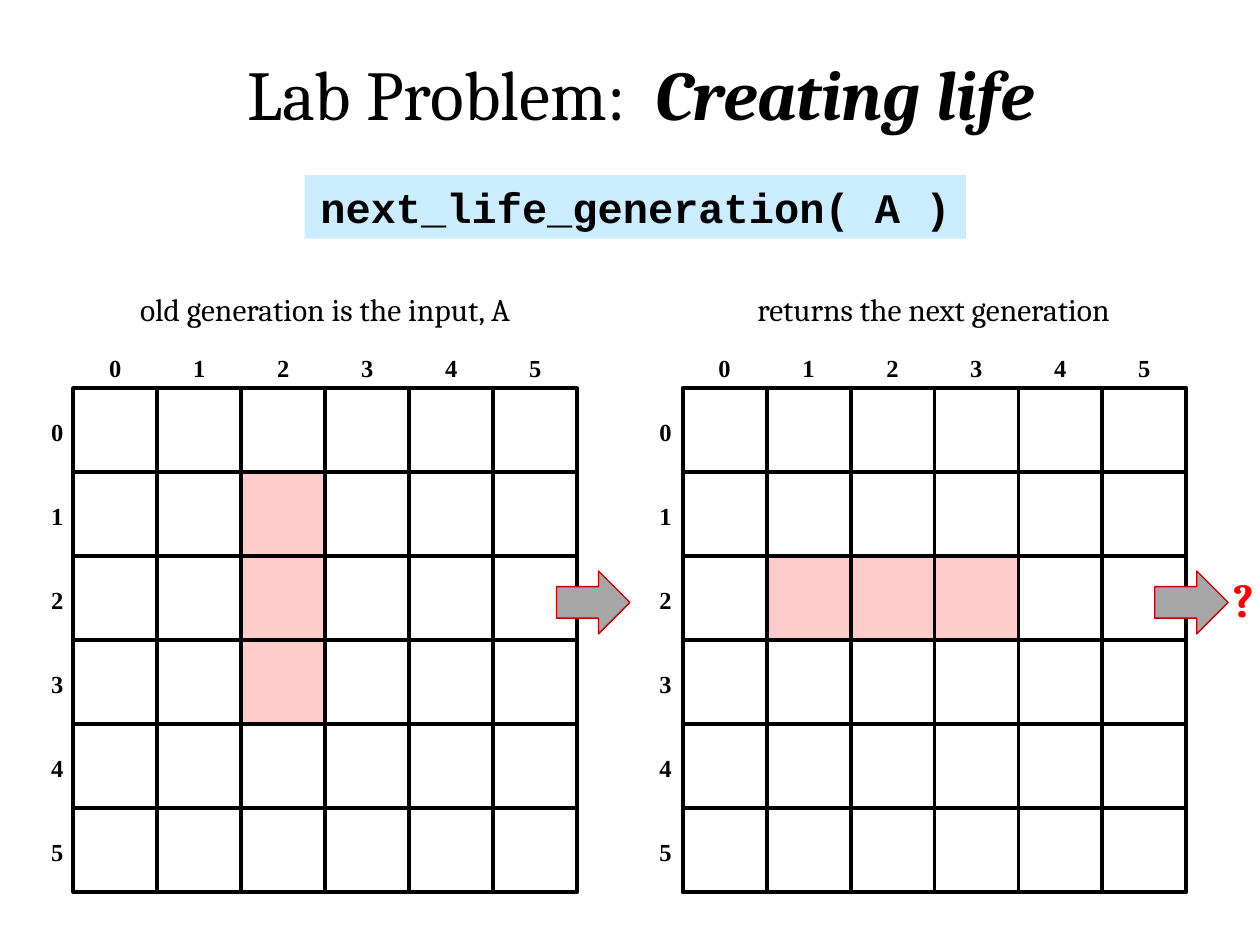
from pptx import Presentation
from pptx.dml.color import RGBColor
from pptx.enum.shapes import MSO_SHAPE as Shape
from pptx.enum.text import MSO_ANCHOR as Anchor, MSO_AUTO_SIZE as AutoSize, PP_ALIGN as Align
from pptx.util import Cm, Pt

BLACK = RGBColor(0x00, 0x00, 0x00)
WHITE = RGBColor(0xFF, 0xFF, 0xFF)
PINK = RGBColor(0xFF, 0xCC, 0xCC)
LIGHT_BLUE = RGBColor(0xCC, 0xEC, 0xFF)
GRAY = RGBColor(0xA6, 0xA6, 0xA6)
DARK_RED = RGBColor(0xC0, 0x00, 0x00)
RED = RGBColor(0xFF, 0x00, 0x00)

SIZE = 6
CELL = 1.693
GRID_TOP = 7.83

prs = Presentation()
prs.slide_width, prs.slide_height = Cm(25.4), Cm(19.05)
s = prs.slides.add_slide(prs.slide_layouts[5])


def add_shape(kind, x, y, w, h, fill, line=None, width=0):
    sp = s.shapes.add_shape(kind, Cm(x), Cm(y), Cm(w), Cm(h))
    sp.shadow.inherit = False
    sp.fill.solid()
    sp.fill.fore_color.rgb = fill
    if line is None:
        sp.line.fill.background()
    else:
        sp.line.color.rgb = line
        sp.line.width = Pt(width)
    return sp


def add_text(x, y, w, h, text, size, font="Cambria", bold=False, color=BLACK, align=Align.CENTER):
    tf = s.shapes.add_textbox(Cm(x), Cm(y), Cm(w), Cm(h)).text_frame
    tf.word_wrap = True
    p = tf.paragraphs[0]
    p.text = text
    p.alignment = align
    p.font.name, p.font.size, p.font.bold = font, Pt(size), bold
    p.font.color.rgb = color


# Title
title = s.shapes.title
title.left, title.top, title.width, title.height = Cm(4.34), Cm(0.89), Cm(17.15), Cm(1.96)
tf = title.text_frame
tf.auto_size = AutoSize.NONE
tf.vertical_anchor = Anchor.TOP
p = tf.paragraphs[0]
p.alignment = Align.CENTER
p.font.name, p.font.size = "Cambria", Pt(40)
p.font.color.rgb = BLACK
p.add_run().text = "Lab Problem:  "
r = p.add_run()
r.text = "Creating life"
r.font.bold = r.font.italic = True

# Function call
tf = add_shape(Shape.RECTANGLE, 6.14, 3.53, 13.34, 1.28, LIGHT_BLUE).text_frame
tf.word_wrap = False
p = tf.paragraphs[0]
p.text = "next_life_generation( A )"
p.alignment = Align.CENTER
p.font.name, p.font.size, p.font.bold = "Courier New", Pt(24), True
p.font.color.rgb = BLACK

# Generations: grid left, row label left, live cells and absent cells as (row, column)
generations = [
    (1.48, 0.52, {(1, 2), (2, 2), (3, 2)}, {(4, 4)}),
    (13.76, 12.78, {(2, 1), (2, 2), (2, 3)}, set()),
]
for left, label_left, live, absent in generations:
    for row in range(SIZE):
        for col in range(SIZE):
            if (row, col) not in absent:
                add_shape(Shape.RECTANGLE, left + col * CELL, GRID_TOP + row * CELL, CELL, CELL,
                          PINK if (row, col) in live else WHITE, BLACK, 2.25)
    for i in range(SIZE):
        add_text(left + 0.21 + i * CELL, 6.99, 1.27, 0.84, str(i), 14, "Times New Roman", True)
        add_text(label_left, GRID_TOP + 0.45 + i * CELL, 1.27, 0.84, str(i), 14,
                 "Times New Roman", True)

add_text(2.11, 5.72, 8.89, 1.02, "old generation is the input, A", 18)
add_text(14.25, 5.72, 9.14, 1.02, "returns the next generation", 18)

# Arrows to the following generation
for x in (11.22, 23.28):
    add_shape(Shape.RIGHT_ARROW, x, 11.51, 1.48, 1.27, GRAY, DARK_RED, 0.75)
add_text(24.13, 11.38, 1.4, 1.42, "?", 27, bold=True, color=RED, align=Align.RIGHT)

prs.save("out.pptx")
